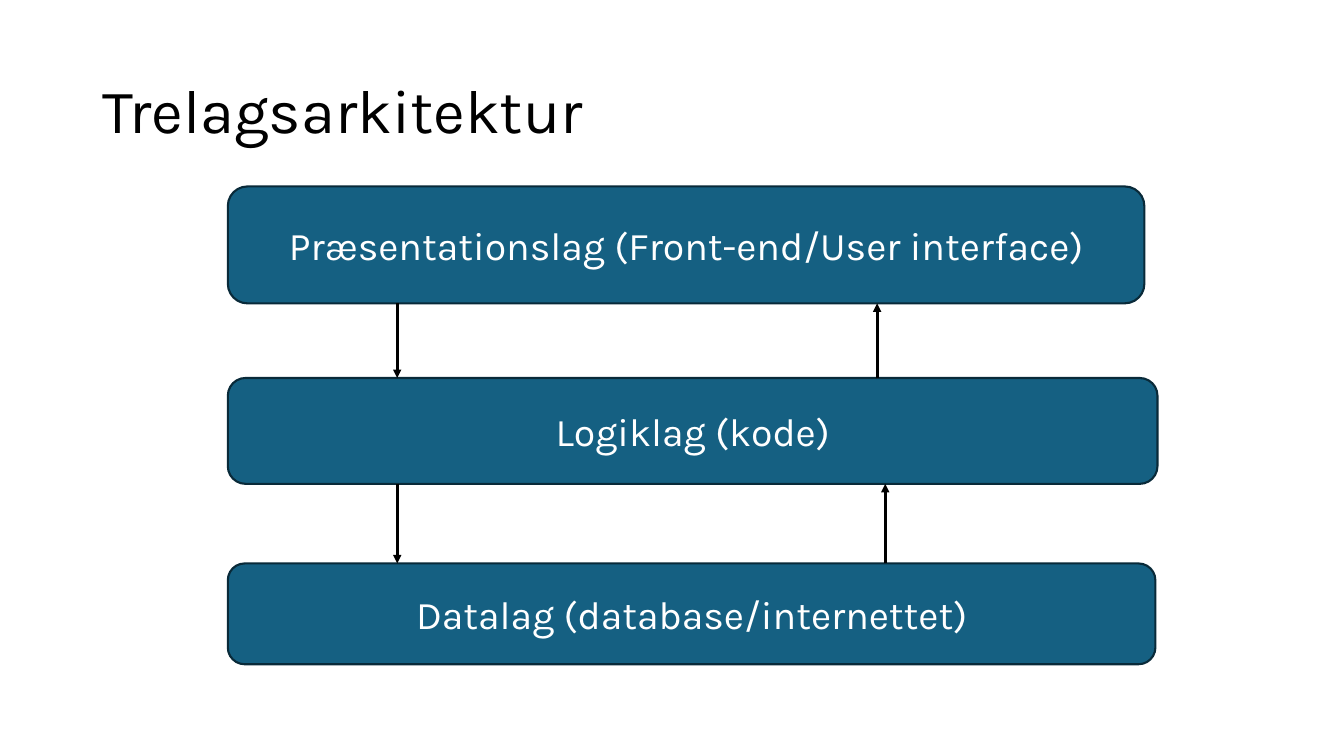
"""Build the slide on three-layer architecture."""
from dataclasses import dataclass
from itertools import pairwise

from lxml import etree
from pptx import Presentation
from pptx import util as u
from pptx.dml.color import RGBColor
from pptx.enum import shapes, text
from pptx.oxml import ns

TITLE = "Trelagsarkitektur"
LAYERS = [
    {"label": "Præsentationslag (Front-end/User interface)", "top": 1.85, "width": 9.09, "height": 1.16},
    {"label": "Logiklag (kode)", "top": 3.75, "width": 9.22, "height": 1.05},
    {"label": "Datalag (database/internettet)", "top": 5.59, "width": 9.2, "height": 1},
]
LAYER_LEFT = 2.26
REQUEST_X = 3.94
RESPONSE_XS = [8.7, 8.78]


@dataclass(frozen=True)
class Theme:
    font: str = "Karla"
    title_size: int = 44
    layer_size: int = 28
    ink: str = "000000"
    layer_text: str = "FFFFFF"
    layer_fill: str = "156082"
    layer_line: str = "092A39"
    border: float = 1.5
    arrow: float = 2


THEME = Theme()


def write(frame, words, size, color, align):
    frame.word_wrap = True
    frame.vertical_anchor = text.MSO_ANCHOR.MIDDLE
    line = frame.paragraphs[0]
    line.text = words
    line.alignment = align
    line.font.name = THEME.font
    line.font.size = u.Pt(size)
    line.font.color.rgb = RGBColor.from_string(color)
    return line


def add_layer(slide, label, top, width, height):
    layer = slide.shapes.add_shape(
        shapes.MSO_SHAPE.ROUNDED_RECTANGLE,
        *map(u.Inches, (LAYER_LEFT, top, width, height)))
    layer.shadow.inherit = False
    layer.fill.solid()
    layer.fill.fore_color.rgb = RGBColor.from_string(THEME.layer_fill)
    layer.line.color.rgb = RGBColor.from_string(THEME.layer_line)
    layer.line.width = u.Pt(THEME.border)
    write(layer.text_frame, label, THEME.layer_size, THEME.layer_text, text.PP_ALIGN.CENTER)


def add_arrow(slide, x, start, end):
    arrow = slide.shapes.add_connector(
        shapes.MSO_CONNECTOR.STRAIGHT, *map(u.Inches, (x, start, x, end)))
    arrow.line.color.rgb = RGBColor.from_string(THEME.ink)
    arrow.line.width = u.Pt(THEME.arrow)
    outline = arrow.line._get_or_add_ln()
    etree.SubElement(outline, ns.qn("a:tailEnd"), type="triangle")
    etree.SubElement(arrow._element.spPr, ns.qn("a:effectLst"))


def main():
    deck = Presentation()
    deck.slide_width, deck.slide_height = u.Inches(13.33), u.Inches(7.5)
    slide = deck.slides.add_slide(deck.slide_layouts.get_by_name("Title Only"))

    title = slide.shapes.title
    title.left, title.top, title.width, title.height = map(u.Inches, (0.92, 0.4, 11.5, 1.45))
    heading = write(title.text_frame, TITLE, THEME.title_size, THEME.ink, text.PP_ALIGN.LEFT)
    heading.line_spacing = 0.9

    for layer in LAYERS:
        add_layer(slide, **layer)
    for (upper, lower), response_x in zip(pairwise(LAYERS), RESPONSE_XS):
        gap_top, gap_bottom = upper["top"] + upper["height"], lower["top"]
        add_arrow(slide, REQUEST_X, gap_top, gap_bottom)
        add_arrow(slide, response_x, gap_bottom, gap_top)

    deck.save("out.pptx")


if __name__ == "__main__":
    main()
